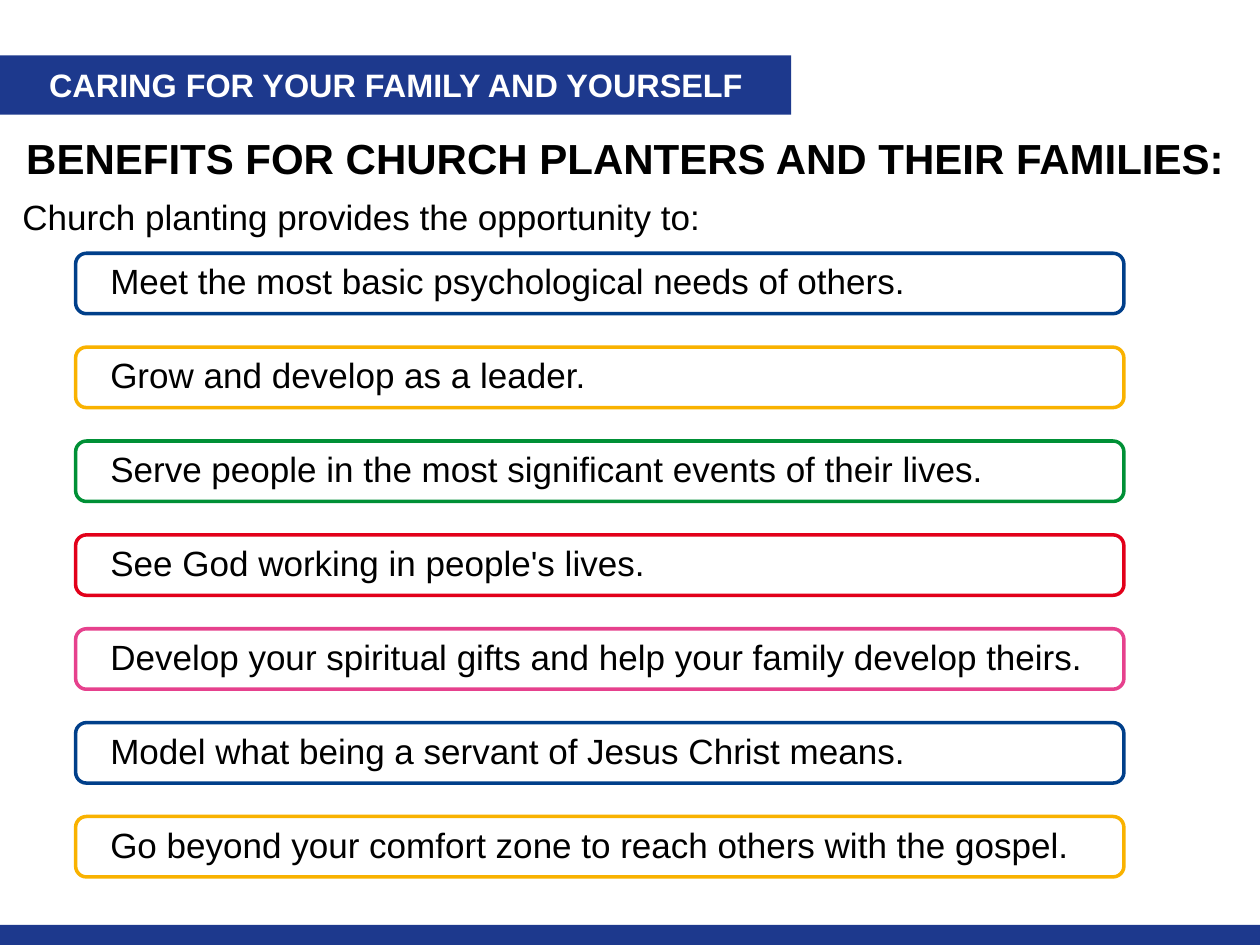
from dataclasses import dataclass

from pptx import Presentation
from pptx.dml.color import RGBColor
from pptx.enum.shapes import MSO_SHAPE
from pptx.enum.text import MSO_ANCHOR, PP_ALIGN
from pptx.util import Inches, Pt

COLORS = {
    "band": "1D398D",
    "blue": "003F8A",
    "yellow": "F9B200",
    "green": "009036",
    "red": "E2001A",
    "pink": "E6418D",
    "black": "000000",
    "white": "FFFFFF",
}
FONT = "Arial"
BOX_TOP, BOX_STEP = 2.01, 0.745


@dataclass
class Box:
    left: float
    top: float
    width: float
    height: float


@dataclass
class Benefit:
    text: str
    color: str


BENEFITS = [
    Benefit("Meet the most basic psychological needs of others.", "blue"),
    Benefit("Grow and develop as a leader.", "yellow"),
    Benefit("Serve people in the most significant events of their lives.", "green"),
    Benefit("See God working in people's lives.", "red"),
    Benefit("Develop your spiritual gifts and help your family develop theirs.", "pink"),
    Benefit("Model what being a servant of Jesus Christ means.", "blue"),
    Benefit("Go beyond your comfort zone to reach others with the gospel.", "yellow"),
]


def rgb(name: str) -> RGBColor:
    return RGBColor.from_string(COLORS[name])


def place(box: Box) -> list:
    return [Inches(v) for v in (box.left, box.top, box.width, box.height)]


def set_insets(tf, left: float, top: float, right: float, bottom: float) -> None:
    tf.margin_left, tf.margin_top = Inches(left), Inches(top)
    tf.margin_right, tf.margin_bottom = Inches(right), Inches(bottom)


def write(tf, text: str, size: float, color: str = "black", bold: bool = False):
    tf.word_wrap = True
    p = tf.paragraphs[0]
    p.alignment = PP_ALIGN.LEFT
    r = p.add_run()
    r.text = text
    r.font.name = FONT
    r.font.size = Pt(size)
    r.font.bold = bold
    r.font.color.rgb = rgb(color)
    return p


def add_band(s, box: Box):
    sp = s.shapes.add_shape(MSO_SHAPE.RECTANGLE, *place(box))
    sp.shadow.inherit = False
    sp.fill.solid()
    sp.fill.fore_color.rgb = rgb("band")
    sp.line.fill.background()
    return sp


def add_label(s, box: Box, text: str, size: float, bold: bool = False) -> None:
    sp = s.shapes.add_textbox(*place(box))
    write(sp.text_frame, text, size, bold=bold)


def add_benefit(s, box: Box, benefit: Benefit) -> None:
    sp = s.shapes.add_shape(MSO_SHAPE.ROUNDED_RECTANGLE, *place(box))
    sp.adjustments[0] = 0.18
    sp.shadow.inherit = False
    sp.fill.background()
    sp.line.color.rgb = rgb(benefit.color)
    sp.line.width = Pt(2)
    tf = sp.text_frame
    tf.vertical_anchor = MSO_ANCHOR.MIDDLE
    set_insets(tf, 0.25, 0, 0.25, 0)
    p = write(tf, benefit.text, 20)
    p.line_spacing = 0.9


def main() -> None:
    prs = Presentation()
    prs.slide_width, prs.slide_height = Inches(10), Inches(7.5)
    s = prs.slides.add_slide(prs.slide_layouts[6])

    header = add_band(s, Box(0, 0.44, 6.28, 0.47))
    tf = header.text_frame
    tf.vertical_anchor = MSO_ANCHOR.MIDDLE
    set_insets(tf, 0.39, 0, 0.1, 0)
    write(tf, "CARING FOR YOUR FAMILY AND YOURSELF", 18.5, "white", True)
    add_band(s, Box(0, 7.34, 10, 0.16))

    add_label(s, Box(0.11, 1, 9.89, 0.5),
              "BENEFITS FOR CHURCH PLANTERS AND THEIR FAMILIES:", 24, True)
    for i, benefit in enumerate(BENEFITS):
        add_benefit(s, Box(0.6, BOX_TOP + i * BOX_STEP, 8.32, 0.48), benefit)
    add_label(s, Box(0.08, 1.5, 5.83, 0.44),
              "Church planting provides the opportunity to:", 20)

    prs.save("out.pptx")


if __name__ == "__main__":
    main()
